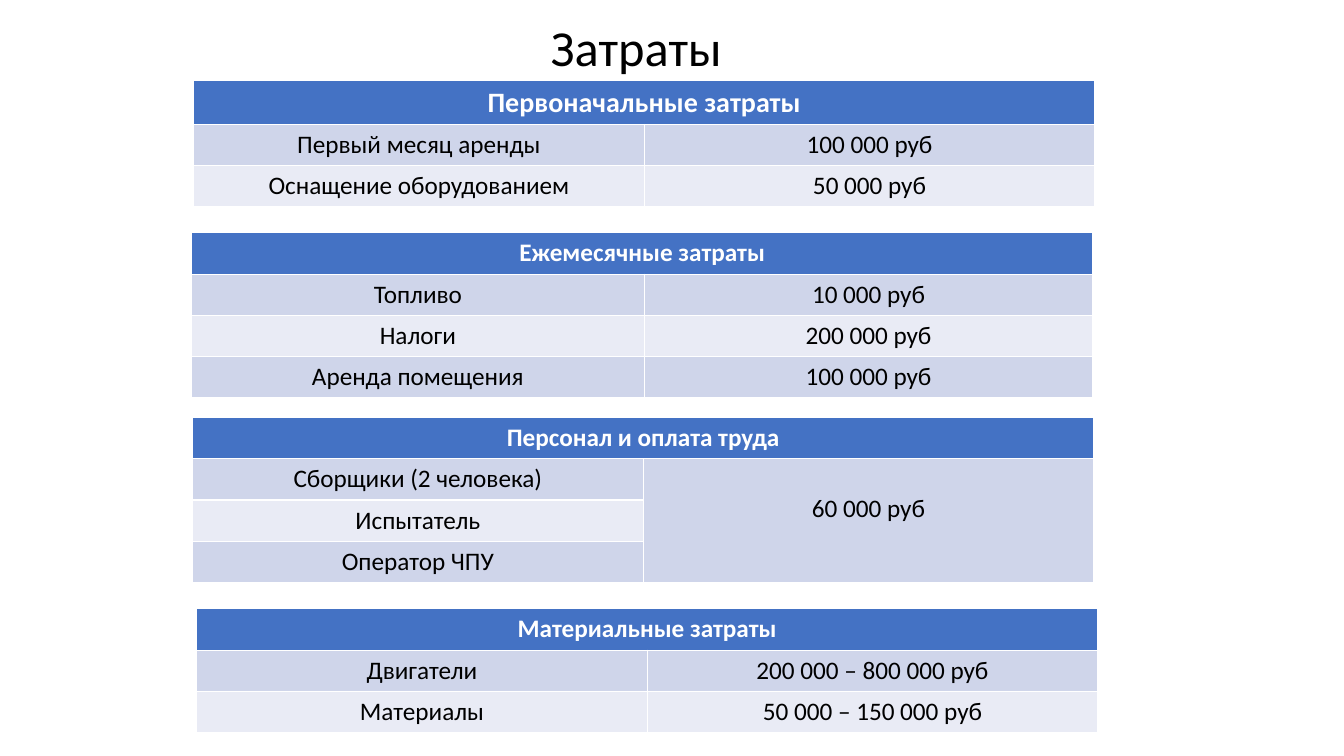
from dataclasses import dataclass

from pptx import Presentation
from pptx.dml.color import RGBColor
from pptx.enum.text import MSO_ANCHOR, MSO_AUTO_SIZE, PP_ALIGN
from pptx.slide import Slide
from pptx.util import Inches, Pt

FONT = "Calibri"
HEADER_FILL = "4472C4"
BAND_FILLS = ("CFD5EA", "E9EBF5")
BLACK, WHITE = "000000", "FFFFFF"
ROW_HEIGHT = 0.41
LINE_HEIGHT = 0.3
CELL_MARGIN = 0.05


@dataclass
class CostTable:
    left: float
    top: float
    header: str
    rows: list[tuple[str, str]]
    header_size: int = 18
    columns: tuple[float, float] = (4.47, 4.47)
    shared_amount: bool = False


COST_TABLES = [
    CostTable(1.92, 0.8, "Первоначальные затраты", [
        ("Первый месяц аренды", "100 000 руб"),
        ("Оснащение оборудованием", "50 000 руб"),
    ], header_size=20),
    CostTable(1.9, 2.31, "Ежемесячные затраты", [
        ("Топливо", "10 000 руб"),
        ("Налоги", "200 000 руб"),
        ("Аренда помещения", "100 000 руб"),
    ], columns=(4.49, 4.45)),
    CostTable(1.91, 4.14, "Персонал и оплата труда", [
        ("Сборщики (2 человека)", "60 000 руб"),
        ("Испытатель", ""),
        ("Оператор ЧПУ", ""),
    ], shared_amount=True),
    CostTable(1.95, 6.04, "Материальные затраты", [
        ("Двигатели", "200 000 – 800 000 руб"),
        ("Материалы", "50 000 – 150 000 руб"),
    ]),
]


def rgb(value: str) -> RGBColor:
    return RGBColor.from_string(value)


def write(tf, text: str, size: int, color: str, bold: bool = False) -> None:
    p = tf.paragraphs[0]
    p.text = text
    p.alignment = PP_ALIGN.CENTER
    p.font.name = FONT
    p.font.size = Pt(size)
    p.font.bold = bold
    p.font.color.rgb = rgb(color)


def fill_cell(cell, text: str, fill: str, size: int = 18,
              color: str = BLACK, bold: bool = False) -> None:
    cell.fill.solid()
    cell.fill.fore_color.rgb = rgb(fill)
    write(cell.text_frame, text, size, color, bold)


def add_title(s: Slide, text: str) -> None:
    sp = s.shapes.title
    sp.left, sp.top = Inches(4.81), Inches(0.11)
    sp.width, sp.height = Inches(3), Inches(0.71)
    tf = sp.text_frame
    tf.vertical_anchor = MSO_ANCHOR.TOP
    tf.auto_size = MSO_AUTO_SIZE.SHAPE_TO_FIT_TEXT
    write(tf, text, 36, BLACK)


def add_cost_table(s: Slide, cost: CostTable) -> None:
    row_count = len(cost.rows) + 1
    table = s.shapes.add_table(
        row_count, 2, Inches(cost.left), Inches(cost.top),
        Inches(sum(cost.columns)), Inches(ROW_HEIGHT * row_count)).table
    for column, width in zip(table.columns, cost.columns):
        column.width = Inches(width)
    for row in table.rows:
        row.height = Inches(ROW_HEIGHT)

    table.cell(0, 0).merge(table.cell(0, 1))
    fill_cell(table.cell(0, 0), cost.header, HEADER_FILL,
              cost.header_size, WHITE, bold=True)
    for i, texts in enumerate(cost.rows):
        for j, text in enumerate(texts):
            fill_cell(table.cell(i + 1, j), text, BAND_FILLS[i % 2])

    if cost.shared_amount:
        amount = table.cell(1, 1)
        amount.merge(table.cell(row_count - 1, 1))
        amount.margin_top = Inches(CELL_MARGIN + LINE_HEIGHT)


def main() -> None:
    prs = Presentation()
    prs.slide_width, prs.slide_height = Inches(13.33), Inches(7.5)
    s = prs.slides.add_slide(prs.slide_layouts.get_by_name("Title Only"))
    add_title(s, "Затраты")
    for cost in COST_TABLES:
        add_cost_table(s, cost)
    prs.save("out.pptx")


if __name__ == "__main__":
    main()
